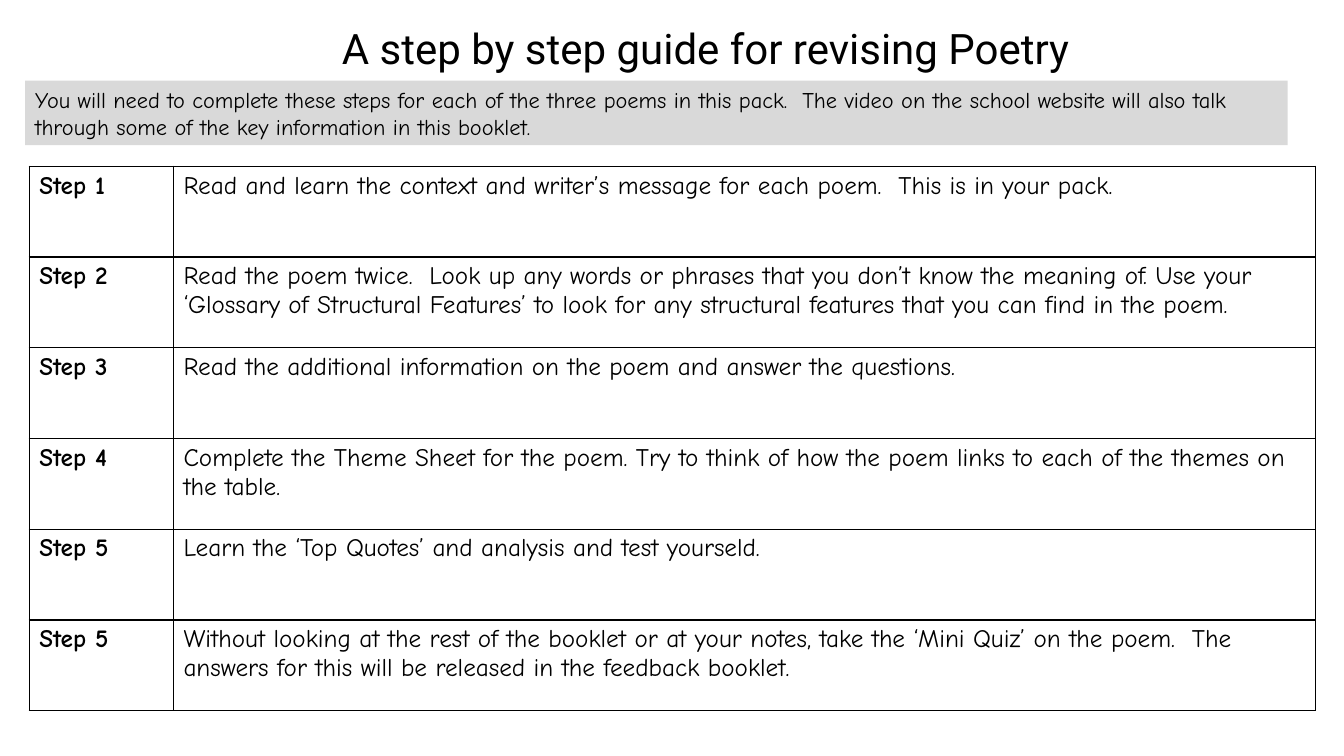
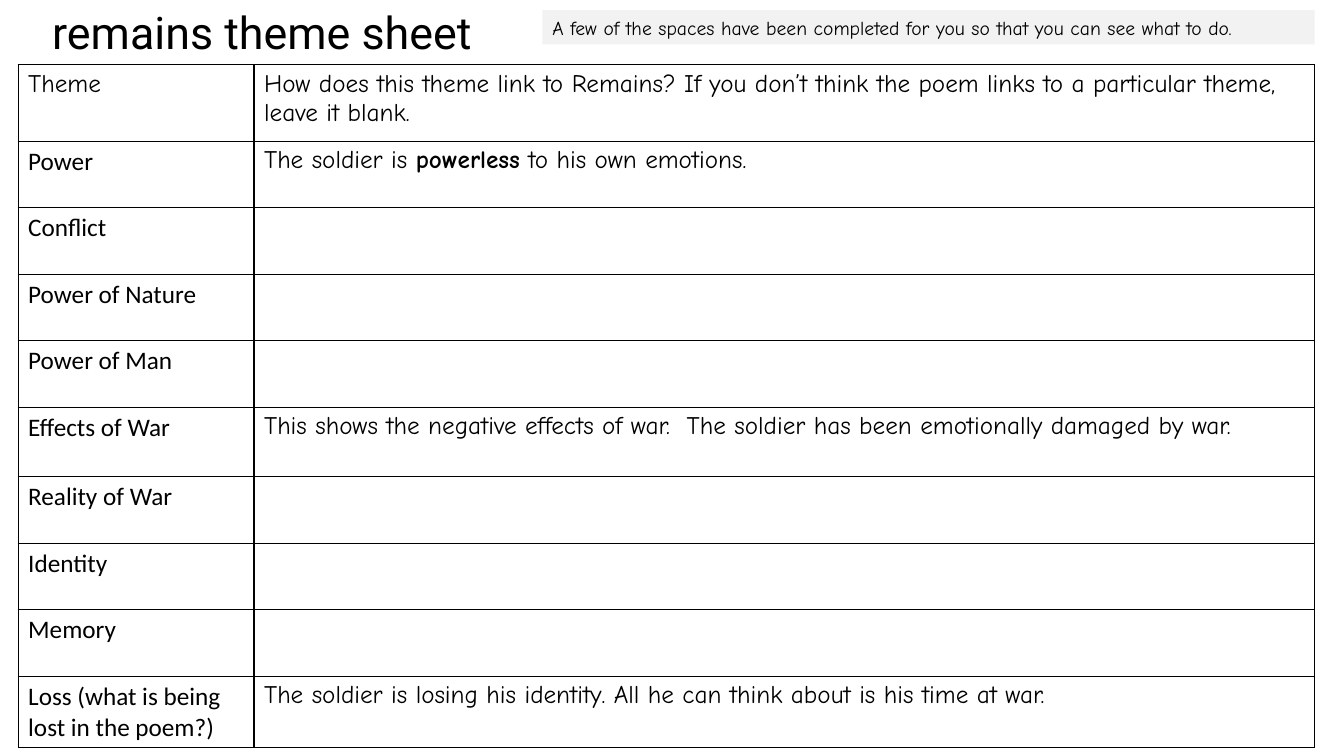
"""Build a poetry revision guide and a theme sheet, each with a title, a note band and a ruled table."""
from lxml import etree
from pptx import Presentation
from pptx.dml.color import RGBColor
from pptx.enum.shapes import MSO_SHAPE
from pptx.enum.text import MSO_ANCHOR, PP_ALIGN
from pptx.oxml import parse_xml
from pptx.oxml.ns import nsdecls
from pptx.util import Inches, Pt

BLACK = RGBColor(0x00, 0x00, 0x00)
MID_GREY = RGBColor(0xD9, 0xD9, 0xD9)
PALE_GREY = RGBColor(0xF2, 0xF2, 0xF2)
TITLE_FONT, BODY_FONT, THEME_FONT = "Roboto", "Comic Neue", "Calibri"
RECTANGLE = MSO_SHAPE.RECTANGLE
TOP, MIDDLE = MSO_ANCHOR.TOP, MSO_ANCHOR.MIDDLE
LEFT, CENTER = PP_ALIGN.LEFT, PP_ALIGN.CENTER
TITLE_ONLY = 5

steps = [
    ("Step 1", "Read and learn the context and writer’s message for each poem.  This is in your pack."),
    ("Step 2", "Read the poem twice.  Look up any words or phrases that you don’t know the meaning of. "
               "Use your ‘Glossary of Structural Features’ to look for any structural features "
               "that you can find in the poem."),
    ("Step 3", "Read the additional information on the poem and answer the questions."),
    ("Step 4", "Complete the Theme Sheet for the poem. Try to think of how the poem links "
               "to each of the themes on the table."),
    ("Step 5", "Learn the ‘Top Quotes’ and analysis and test yourseld."),
    ("Step 5", "Without looking at the rest of the booklet or at your notes, take the ‘Mini Quiz’ "
               "on the poem.  The answers for this will be released in the feedback booklet."),
]
themes = [
    ("Theme", "How does this theme link to Remains? If you don’t think the poem links "
              "to a particular theme, leave it blank."),
    ("Power", "The soldier is *powerless* to his own emotions."),
    ("Conflict", ""),
    ("Power of Nature", ""),
    ("Power of Man", ""),
    ("Effects of War", "This shows the negative effects of war.  "
                       "The soldier has been emotionally damaged by war."),
    ("Reality of War", ""),
    ("Identity", ""),
    ("Memory", ""),
    ("Loss (what is being lost in the poem?)",
     "The soldier is losing his identity. All he can think about is his time at war."),
]
pages = [
    dict(title="A step by step guide for revising Poetry", title_size=30,
         title_at=(0.67, 0.17, 12.66, 0.61),
         note="You will need to complete these steps for each of the three poems in this pack.  "
              "The video on the school website will also talk through some of the key information "
              "in this booklet.",
         note_size=16, note_at=(0.25, 0.8, 12.52, 0.64), note_fill=MID_GREY,
         rows=steps, table_at=(0.29, 1.65), columns=(1.43, 11.33), heights=[0.9] * 6,
         label_fonts=[BODY_FONT] * 6, bold_labels=True),
    dict(title="remains theme sheet", title_size=32, title_at=(0.1, 0, 5, 0.64),
         note="A few of the spaces have been completed for you so that you can see what to do.",
         note_size=14, note_at=(5.38, 0.1, 7.66, 0.34), note_fill=PALE_GREY,
         rows=themes, table_at=(0.18, 0.64), columns=(2.34, 10.52),
         heights=[0.76] + [0.66] * 4 + [0.69] + [0.66] * 3 + [0.69],
         label_fonts=[BODY_FONT] + [THEME_FONT] * 9, bold_labels=False),
]


def write(frame, text, size=18, font=BODY_FONT, bold=False, align=LEFT, anchor=TOP):
    """Fill a text frame; asterisks switch bold on and off."""
    frame.word_wrap = True
    frame.vertical_anchor = anchor
    para = frame.paragraphs[0]
    para.alignment = align
    for index, part in enumerate(text.split("*")):
        if part:
            span = para.add_run()
            span.text = part
            span.font.size = Pt(size)
            span.font.name = font
            span.font.bold = bold or index % 2 == 1
            span.font.color.rgb = BLACK


def rule_cell(cell):
    """Clear a cell's fill and draw a thin black line on all four sides."""
    cell.fill.background()
    properties = cell._tc.get_or_add_tcPr()
    for index, side in enumerate(("lnL", "lnR", "lnT", "lnB")):
        border = parse_xml(f'<a:{side} {nsdecls("a")} w="{Pt(1)}"/>')
        fill = etree.SubElement(border, border.tag.replace(side, "solidFill"))
        etree.SubElement(fill, border.tag.replace(side, "srgbClr"), val=str(BLACK))
        properties.insert(index, border)


deck = Presentation()
deck.slide_width, deck.slide_height = Inches(13.33), Inches(7.5)

for content in pages:
    page = deck.slides.add_slide(deck.slide_layouts[TITLE_ONLY])
    title = page.shapes.title
    title.left, title.top, title.width, title.height = map(Inches, content["title_at"])
    write(title.text_frame, content["title"], size=content["title_size"],
          font=TITLE_FONT, align=CENTER)

    rows, columns, heights = content["rows"], content["columns"], content["heights"]
    left, top = content["table_at"]
    table = page.shapes.add_table(len(rows), len(columns), Inches(left), Inches(top),
                                  Inches(sum(columns)), Inches(sum(heights))).table
    table.first_row = table.horz_banding = False
    for column, width in zip(table.columns, columns):
        column.width = Inches(width)
    for row, height, texts, label_font in zip(table.rows, heights, rows, content["label_fonts"]):
        row.height = Inches(height)
        label, detail = row.cells
        write(label.text_frame, texts[0], font=label_font, bold=content["bold_labels"])
        write(detail.text_frame, texts[1])
        rule_cell(label)
        rule_cell(detail)

    band = page.shapes.add_shape(RECTANGLE, *map(Inches, content["note_at"]))
    band.shadow.inherit = False
    band.fill.solid()
    band.fill.fore_color.rgb = content["note_fill"]
    band.line.fill.background()
    write(band.text_frame, content["note"], size=content["note_size"], anchor=MIDDLE)

deck.save("out.pptx")
